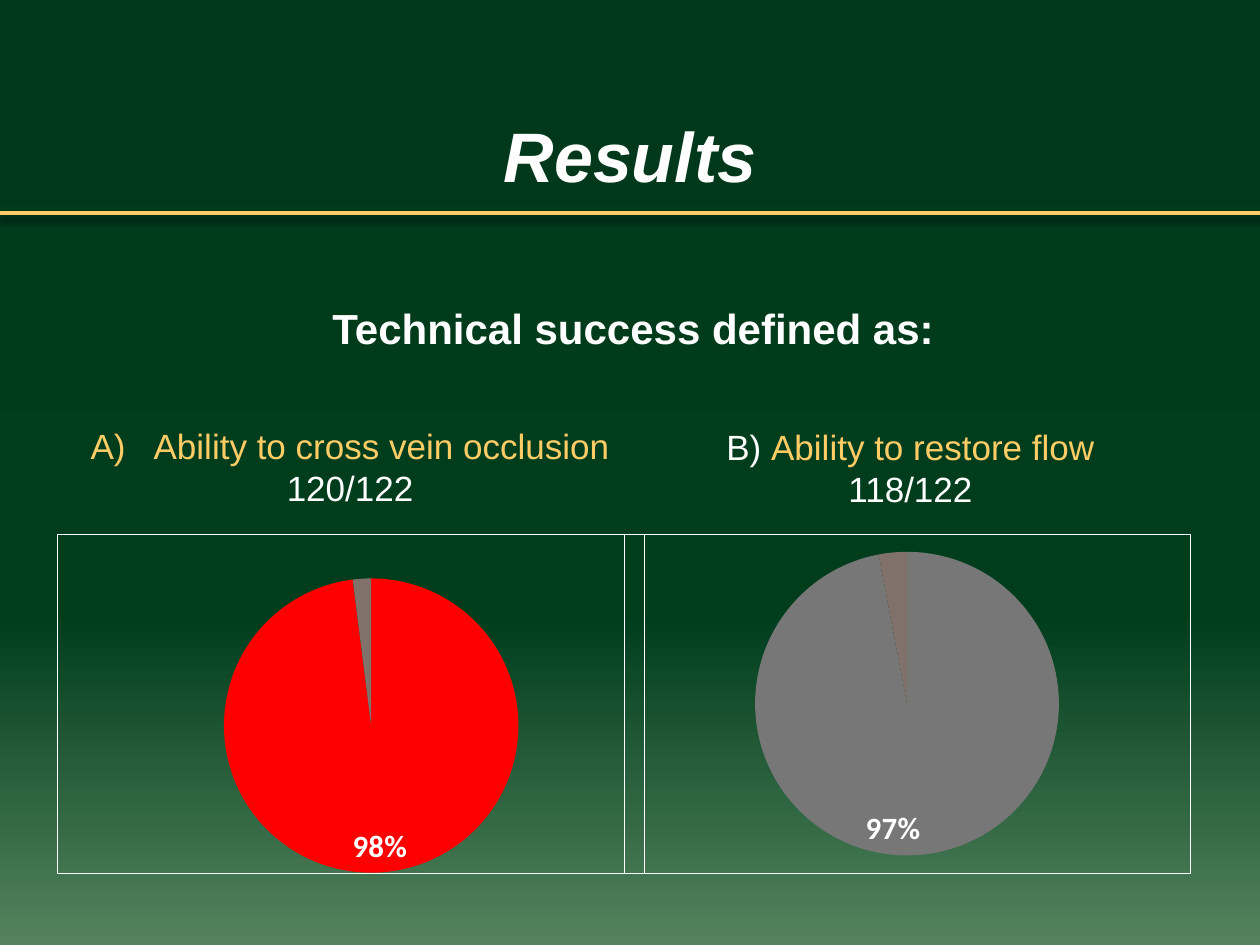
from lxml import etree
from pptx import Presentation
from pptx import util as u
from pptx.chart.data import CategoryChartData
from pptx.dml.color import RGBColor
from pptx.enum import chart as ch, shapes, text
from pptx.oxml import parse_xml
from pptx.oxml.ns import nsdecls, qn

WHITE, GOLD = "FFFFFF", "FFCC66"


def rgb(value):
    return RGBColor.from_string(value)


def set_background(s, stops):
    gs = "".join(f'<a:gs pos="{pos * 1000}"><a:srgbClr val="{color}"/></a:gs>'
                 for pos, color in stops)
    s.element.cSld.insert(0, parse_xml(
        f'<p:bg {nsdecls("p", "a")}><p:bgPr><a:gradFill rotWithShape="1">'
        f'<a:gsLst>{gs}</a:gsLst><a:lin ang="5400000" scaled="0"/></a:gradFill>'
        '<a:effectLst/></p:bgPr></p:bg>'))


def add_rule(s, y, width, color):
    c = s.shapes.add_connector(shapes.MSO_CONNECTOR.STRAIGHT, 0, y, width, y)
    c.line.color.rgb = rgb(color)
    c.line.width = u.Pt(2.25)
    c._element.spPr.append(parse_xml(
        f'<a:effectLst {nsdecls("a")}><a:outerShdw blurRad="{u.Pt(3.8)}" '
        f'dist="{u.Pt(3)}" dir="5400000" rotWithShape="0"><a:srgbClr val="000000">'
        '<a:alpha val="48000"/></a:srgbClr></a:outerShdw></a:effectLst>'))


def add_text(s, box, lines, size, bold=False, italic=False,
             anchor=text.MSO_ANCHOR.TOP, margin=0, indent=0, number=None):
    tf = s.shapes.add_textbox(*map(u.Cm, box)).text_frame
    tf.word_wrap = True
    tf.vertical_anchor = anchor
    for i, runs in enumerate(lines):
        p = tf.paragraphs[0] if i == 0 else tf.add_paragraph()
        p.alignment = text.PP_ALIGN.CENTER
        if i == 0 and margin:
            pPr = p._p.get_or_add_pPr()
            pPr.set("marL", str(u.Cm(margin)))
            pPr.set("indent", str(u.Cm(indent)))
            if number:
                etree.SubElement(pPr, qn("a:buFont"), typeface="Arial")
                etree.SubElement(pPr, qn("a:buAutoNum"), type=number)
        for words, color in runs:
            r = p.add_run()
            r.text = words
            r.font.name = "Arial"
            r.font.size = u.Pt(size)
            r.font.bold = bold
            r.font.italic = italic
            r.font.color.rgb = rgb(color)


def add_pie(s, box, values, colors, label, font, color, plot=None):
    data = CategoryChartData()
    data.categories = ["1", "2", "3", "4"]
    data.add_series("Series 1", values)
    chart = s.shapes.add_chart(ch.XL_CHART_TYPE.PIE, *map(u.Cm, box), data).chart
    chart.has_legend = chart.has_title = False
    chart.font.name = font
    chart.font.size = u.Pt(17.7)
    chart.font.color.rgb = rgb(color)
    series = chart.plots[0].series[0]
    for i, fill in enumerate(colors):
        point = series.points[i].format
        point.fill.solid()
        point.fill.fore_color.rgb = rgb(fill)
        point.line.fill.background()
    dl = series.points[0].data_label
    r = dl.text_frame.paragraphs[0].add_run()
    r.text = label
    r.font.name = "Calibri"
    r.font.size = u.Pt(17.7)
    r.font.bold = True
    r.font.color.rgb = rgb(WHITE)
    dl.position = ch.XL_LABEL_POSITION.INSIDE_END
    frame = chart._chartSpace.find(qn("c:chart"))
    frame.addnext(parse_xml(
        f'<c:spPr {nsdecls("c", "a")}><a:noFill/><a:ln w="{u.Pt(0.25)}"><a:solidFill>'
        f'<a:srgbClr val="{WHITE}"/></a:solidFill></a:ln></c:spPr>'))
    if plot:
        area = frame.find(qn("c:plotArea"))
        for old in area.findall(qn("c:layout")):
            area.remove(old)
        layout = etree.Element(qn("c:layout"))
        manual = etree.SubElement(layout, qn("c:manualLayout"))
        parts = [("layoutTarget", "inner"), ("xMode", "edge"), ("yMode", "edge")]
        for tag, value in parts + list(zip("xywh", plot)):
            etree.SubElement(manual, qn(f"c:{tag}"), val=str(value))
        area.insert(0, layout)


def main():
    prs = Presentation()
    prs.slide_width, prs.slide_height = u.Cm(25.4), u.Cm(19.05)
    s = prs.slides.add_slide(prs.slide_layouts[6])
    set_background(s, [(0, "00381B"), (65, "003D1D"), (100, "54835D")])
    add_rule(s, u.Cm(4.29), prs.slide_width, GOLD)
    add_text(s, (2.54, 0.89, 20.32, 3.2), [[("Results", WHITE)]], 40,
             bold=True, italic=True, anchor=text.MSO_ANCHOR.BOTTOM)
    add_text(s, (2.54, 5.97, 20.32, 1.63), [[("Technical success defined as:", WHITE)]],
             24, bold=True, margin=0.64, indent=-0.51)
    add_text(s, (1.55, 8.43, 11.02, 1.96),
             [[("Ability to cross vein occlusion", GOLD)], [("120/122", WHITE)]],
             20, margin=1.27, indent=-1.27, number="alphaUcParenR")
    add_text(s, (13.26, 8.46, 10.19, 1.96),
             [[("B) ", WHITE), ("Ability to restore flow", GOLD)], [("118/122", WHITE)]], 20)
    add_pie(s, (1.14, 10.77, 11.86, 6.83), (98, 2, None, None),
            ("FF0000", "80716A", "A0CA4A", "7F5BAB"), "98%", "Calibri", "000000",
            plot=(0.07, 0.13, 0.93, 0.87))
    add_pie(s, (12.57, 10.77, 11.43, 6.83), (97, 3, 0, 0),
            ("777777", "80716A", "80716A", "94147C"), "97%", "Arial", WHITE)
    prs.save("out.pptx")


if __name__ == "__main__":
    main()
